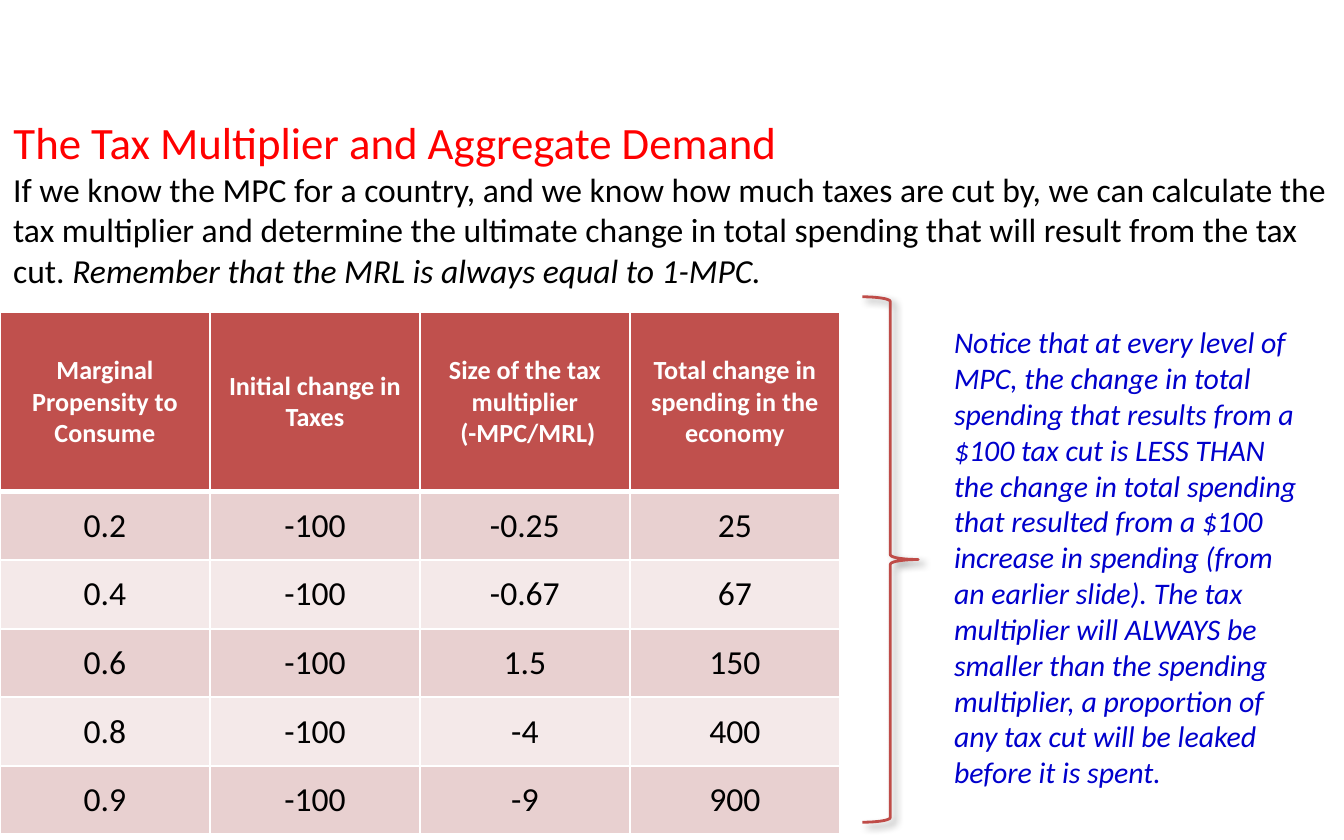
from lxml import etree
from pptx import Presentation
from pptx.dml.color import RGBColor
from pptx.enum import shapes, text
from pptx.oxml import ns
from pptx.util import Pt

FONT = "Calibri"
COLORS = {
    "heading": "FF0000", "body": "000000", "note": "0000CC",
    "header": "C0504D", "odd": "E8D0D0", "even": "F4E9E9",
    "white": "FFFFFF", "brace": "BF4C48", "shadow": "000000",
}
HEADERS = [
    ["Marginal Propensity to Consume"],
    ["Initial change in Taxes"],
    ["Size of the tax multiplier", " (-MPC/MRL)"],
    ["Total change in spending in the economy"],
]
ROWS = [
    ("0.2", "-100", "-0.25", "25"),
    ("0.4", "-100", "-0.67", "67"),
    ("0.6", "-100", "1.5", "150"),
    ("0.8", "-100", "-4", "400"),
    ("0.9", "-100", "-9", "900"),
]
HEADER_HEIGHT = 96


def color(name):
    return RGBColor.from_string(COLORS[name])


def add_span(para, words, size, tint, bold=False, italic=False):
    span = para.add_run()
    span.text = words
    font = span.font
    font.name, font.size, font.bold, font.italic = FONT, Pt(size), bold, italic
    font.color.rgb = color(tint)


def place(shape, box):
    shape.left, shape.top, shape.width, shape.height = map(Pt, box)


def set_frame(frame, vertical_inset):
    frame.word_wrap = True
    frame.auto_size = text.MSO_AUTO_SIZE.NONE
    frame.vertical_anchor = text.MSO_ANCHOR.TOP
    frame.margin_left = frame.margin_right = Pt(7.2)
    frame.margin_top = frame.margin_bottom = Pt(vertical_inset)


def add_intro(page, box):
    left, top, width, height = box
    title_height = 29.3

    # Heading
    title = page.shapes.title
    place(title, (left, top, width, title_height))
    set_frame(title.text_frame, 0)
    para = title.text_frame.paragraphs[0]
    para.alignment = text.PP_ALIGN.LEFT
    para.line_spacing = 1.0
    para.space_before = Pt(0)
    add_span(para, "The Tax Multiplier and Aggregate Demand", 24, "heading")

    # Explanation
    body = page.shapes.add_textbox(
        Pt(left), Pt(top + title_height), Pt(width), Pt(height - title_height))
    set_frame(body.text_frame, 0)
    para = body.text_frame.paragraphs[0]
    add_span(para, "If we know the MPC for a country, and we know how much taxes "
             "are cut by, we can calculate the tax multiplier and determine the "
             "ultimate change in total spending that will result from the tax "
             "cut. ", 18, "body")
    add_span(para, "Remember that the MRL is always equal to 1-MPC.", 18, "body",
             italic=True)


def set_borders(cell, widths):
    properties = cell._tc.get_or_add_tcPr()
    for index, (side, width) in enumerate(widths.items()):
        line = etree.Element(ns.qn(f"a:ln{side}"), w=str(Pt(width)))
        fill = etree.SubElement(line, ns.qn("a:solidFill"))
        etree.SubElement(fill, ns.qn("a:srgbClr"), val=COLORS["white"])
        properties.insert(index, line)


def fill_cell(cell, lines, fill, size, tint, bold, widths):
    cell.fill.solid()
    cell.fill.fore_color.rgb = color(fill)
    cell.vertical_anchor = text.MSO_ANCHOR.MIDDLE
    set_borders(cell, widths)
    frame = cell.text_frame
    for index, words in enumerate(lines):
        para = frame.add_paragraph() if index else frame.paragraphs[0]
        para.alignment = text.PP_ALIGN.CENTER
        add_span(para, words, size, tint, bold)


def add_multiplier_table(page, box):
    left, top, width, height = box
    table = page.shapes.add_table(
        len(ROWS) + 1, len(HEADERS), *map(Pt, box)).table
    for column in table.columns:
        column.width = Pt(width / len(HEADERS))
    for row in table.rows:
        row.height = Pt((height - HEADER_HEIGHT) / len(ROWS))
    table.rows[0].height = Pt(HEADER_HEIGHT)

    # Header row, with a heavier rule below it
    for column, lines in enumerate(HEADERS):
        fill_cell(table.cell(0, column), lines, "header", 14, "white", True,
                  {"L": 1, "R": 1, "T": 1, "B": 3})

    # Banded values
    for row, values in enumerate(ROWS, 1):
        borders = {"L": 1, "R": 1, "T": 3 if row == 1 else 1, "B": 1}
        for column, value in enumerate(values):
            fill_cell(table.cell(row, column), [value],
                      "odd" if row % 2 else "even", 18, "body", False, borders)


def add_brace(page, box):
    brace = page.shapes.add_shape(
        shapes.MSO_SHAPE.RIGHT_BRACE, *map(Pt, box))
    brace.fill.background()
    brace.line.color.rgb = color("brace")
    brace.line.width = Pt(1.5)

    # Soft shadow to the lower right
    brace.shadow.inherit = False
    effects = brace._element.spPr.find(ns.qn("a:effectLst"))
    shadow = etree.SubElement(
        effects, ns.qn("a:outerShdw"), blurRad=str(Pt(4)), dist=str(Pt(3)),
        dir=str(45 * 60000), rotWithShape="0")
    tint = etree.SubElement(shadow, ns.qn("a:srgbClr"), val=COLORS["shadow"])
    etree.SubElement(tint, ns.qn("a:alpha"), val="40000")


def add_note(page, box):
    note = page.shapes.add_textbox(*map(Pt, box))
    set_frame(note.text_frame, 3.6)
    add_span(note.text_frame.paragraphs[0],
             "Notice that at every level of MPC, the change in total spending "
             "that results from a $100 tax cut is LESS THAN the change in total "
             "spending that resulted from a $100 increase in spending (from an "
             "earlier slide). The tax multiplier will ALWAYS be smaller than the "
             "spending multiplier, a proportion of any tax cut will be leaked "
             "before it is spent.", 16, "note", italic=True)


def main():
    deck = Presentation()
    deck.slide_width, deck.slide_height = Pt(720), Pt(450)
    page = deck.slides.add_slide(deck.slide_layouts[5])
    add_intro(page, (0, 61.2, 720, 97.6))
    add_multiplier_table(page, (0, 167.4, 450, 279.6))
    add_brace(page, (462, 159, 30, 281.5))
    add_note(page, (504, 170, 204, 259))
    deck.save("out.pptx")


if __name__ == "__main__":
    main()
